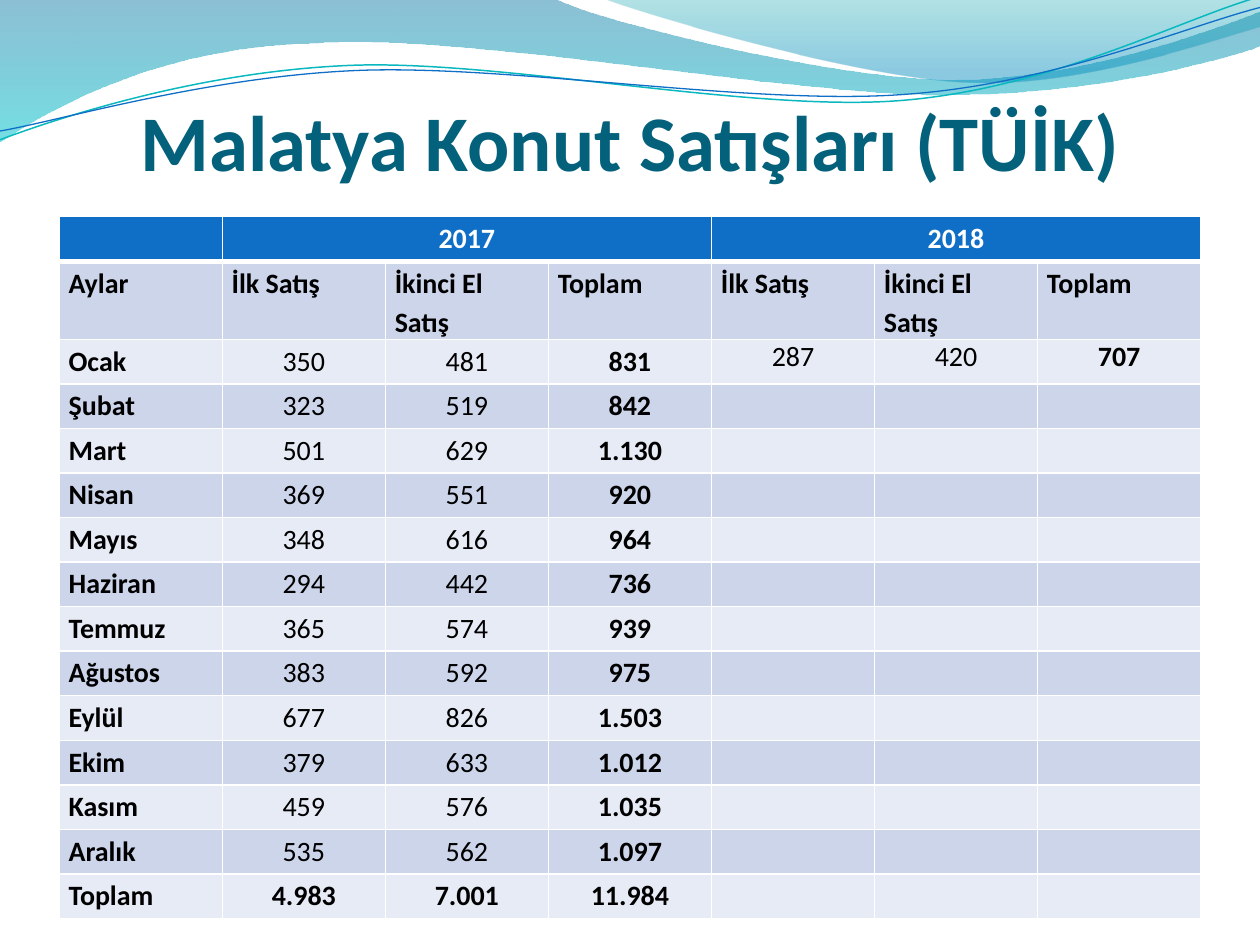
import math

from lxml import etree
from pptx import Presentation
from pptx.dml.color import RGBColor
from pptx.enum.text import MSO_ANCHOR, PP_ALIGN
from pptx.oxml.ns import qn
from pptx.util import Inches, Pt

BOTTOM = MSO_ANCHOR.BOTTOM
CENTER, LEFT = PP_ALIGN.CENTER, PP_ALIGN.LEFT
FONT = "Calibri"
COLORS = {
    "title": "04617B", "header": "0F6FC6", "dark_band": "CCD5EA",
    "light_band": "E7EBF5", "text": "000000", "white": "FFFFFF",
    "teal_line": "0AB8BF", "blue_line": "0F6FC6",
}


def draw_outline(shapes, start, pieces, closed):
    """Draw straight (2 numbers) and cubic (6 numbers) pieces as one freeform."""
    points = [(Inches(piece[i]), Inches(piece[i + 1]))
              for piece in pieces for i in range(0, len(piece), 2)]
    builder = shapes.build_freeform(Inches(start[0]), Inches(start[1]))
    builder.add_line_segments(points, close=closed)
    outline = builder.convert_to_shape()
    outline.shadow.inherit = False
    # Join every three points of a cubic piece into one curve segment
    segments = iter(list(outline.element.iter(qn("a:lnTo"))))
    for piece in pieces:
        first = next(segments)
        if len(piece) == 6:
            first.addprevious(curve := etree.Element(qn("a:cubicBezTo")))
            for segment in (first, next(segments), next(segments)):
                curve.append(segment[0])
                segment.getparent().remove(segment)
    return outline


def style_text(paragraph, size, color, bold, align):
    paragraph.alignment = align
    for run in paragraph.runs:
        run.font.name = FONT
        run.font.size = Pt(size)
        run.font.bold = bold
        run.font.color.rgb = RGBColor.from_string(color)


prs = Presentation()
prs.slide_width, prs.slide_height = Inches(10), Inches(7.5)
slide = prs.slides.add_slide(prs.slide_layouts[6])

# Gradient waves: start, pieces, stops as (position, colour, opacity in percent)
waves = [
    ((0, 0),
     [(4.4, -0.01), (4.76, 0.17, 6.64, 0.63, 7.58, 0.63),
      (8.53, 0.63, 9.58, 0.26, 10, 0.09), (10.01, 0.36),
      (9.83, 0.44, 8.7, 0.76, 7.46, 0.75), (6.22, 0.75, 3.82, 0.28, 2.57, 0.34),
      (1.29, 0.36, 0.46, 0.83, -0.01, 1.13)],
     [(0, "0074A1", 45), (1, "00C6CF", 55)]),
    ((4.79, -0.01),
     [(5.09, 0.11, 6.82, 0.62, 7.69, 0.65), (8.56, 0.69, 9.61, 0.32, 10, 0.21),
      (10, 0)],
     [(0, "00A1A9", 30), (0.8, "008BBF", 45)]),
]
for start, pieces, stops in waves:
    wave = draw_outline(slide.shapes, start, pieces, True)
    wave.line.fill.background()
    wave.fill.gradient()
    wave.fill.gradient_angle = 270
    for stop, (position, color, _) in zip(wave.fill.gradient_stops, stops):
        stop.position = position
        stop.color.rgb = RGBColor.from_string(color)
    for color_node, (_, _, opacity) in zip(wave.element.iter(qn("a:srgbClr")), stops):
        etree.SubElement(color_node, qn("a:alpha"), val=str(opacity * 1000))

# Thin lines: drawn level, then tilted about their centre
TILT = 2.7
cos_tilt, sin_tilt = math.cos(math.radians(TILT)), math.sin(math.radians(TILT))
ripples = [
    ("teal_line", 0.85, 0.57,
     [(0, 1.11), (0.48, 0.93), (1.58, 0.57), (2.77, 0.52), (3.95, 0.47),
      (5.93, 0.89), (7.13, 0.8), (8.33, 0.71), (9.38, 0.15), (9.98, -0.02)]),
    ("blue_line", 0.75, 0.59,
     [(0, 1.04), (0.47, 0.96), (1.64, 0.61), (2.83, 0.56), (4.03, 0.51),
      (5.97, 0.84), (7.17, 0.75), (8.36, 0.67), (9.41, 0.21), (10, 0.06)]),
]
for color, width, middle, knots in ripples:
    level = [(5 + (x - 5) * cos_tilt - (y - middle) * sin_tilt,
              middle + (x - 5) * sin_tilt + (y - middle) * cos_tilt) for x, y in knots]
    curves = [level[i] + level[i + 1] + level[i + 2] for i in (1, 4, 7)]
    ripple = draw_outline(slide.shapes, level[0], curves, False)
    ripple.rotation = 360 - TILT
    ripple.fill.background()
    ripple.line.color.rgb = RGBColor.from_string(COLORS[color])
    ripple.line.width = Pt(width)

title = slide.shapes.add_textbox(Inches(0.5), Inches(0.78), Inches(9), Inches(0.71)).text_frame
title.word_wrap = True
title.vertical_anchor = BOTTOM
title.margin_left = title.margin_right = title.margin_bottom = 0
title.margin_top = Inches(0.05)
title.text = "Malatya Konut Satışları (TÜİK)"
style_text(title.paragraphs[0], 45, COLORS["title"], True, CENTER)

sale_kinds = ["İlk Satış", "İkinci El Satış", "Toplam"]
sales = [
    ["", "2017", "", "", "2018"],
    ["Aylar"] + sale_kinds * 2,
    ["Ocak", "350", "481", "831", "287", "420", "707"],
    ["Şubat", "323", "519", "842"],
    ["Mart", "501", "629", "1.130"],
    ["Nisan", "369", "551", "920"],
    ["Mayıs", "348", "616", "964"],
    ["Haziran", "294", "442", "736"],
    ["Temmuz", "365", "574", "939"],
    ["Ağustos", "383", "592", "975"],
    ["Eylül", "677", "826", "1.503"],
    ["Ekim", "379", "633", "1.012"],
    ["Kasım", "459", "576", "1.035"],
    ["Aralık", "535", "562", "1.097"],
    ["Toplam", "4.983", "7.001", "11.984"],
]
COLUMNS, TOTAL_ROW = 7, len(sales) - 1
TABLE_WIDTH, TABLE_HEIGHT, KINDS_HEIGHT = 9.06, 5.57, 0.62
table = slide.shapes.add_table(len(sales), COLUMNS, Inches(0.47), Inches(1.72),
                               Inches(TABLE_WIDTH), Inches(TABLE_HEIGHT)).table
for column in table.columns:
    column.width = Inches(TABLE_WIDTH / COLUMNS)
for row in table.rows:
    row.height = Inches((TABLE_HEIGHT - KINDS_HEIGHT) / TOTAL_ROW)
table.rows[1].height = Inches(KINDS_HEIGHT)

for r, entries in enumerate(sales):
    band = "header" if r == 0 else "dark_band" if r % 2 else "light_band"
    for c in range(COLUMNS):
        cell = table.cell(r, c)
        cell.margin_left = cell.margin_right = Pt(5.4)
        cell.margin_top = cell.margin_bottom = 0
        for side in "LRB" if r == 1 else "LRTB":
            heavy = r == 0 and side == "B"
            border = etree.SubElement(cell._tc.get_or_add_tcPr(), qn(f"a:ln{side}"),
                                      w=str(Pt(3 if heavy else 1)))
            paint = etree.SubElement(border, qn("a:solidFill"))
            etree.SubElement(paint, qn("a:srgbClr"), val=COLORS["white"])
        cell.fill.solid()
        cell.fill.fore_color.rgb = RGBColor.from_string(COLORS[band])
        if c < len(entries) and entries[c]:
            cell.text_frame.text = entries[c]
            paragraph = cell.text_frame.paragraphs[0]
            if not (r == 2 and c > 3):
                paragraph.line_spacing = 1.15
            style_text(paragraph, 16, COLORS["white" if r == 0 else "text"],
                       r < 2 or r == TOTAL_ROW or c % 3 == 0,
                       LEFT if r == 1 or c == 0 else CENTER)
for first in (1, 4):
    table.cell(0, first).merge(table.cell(0, first + 2))

prs.save("out.pptx")
